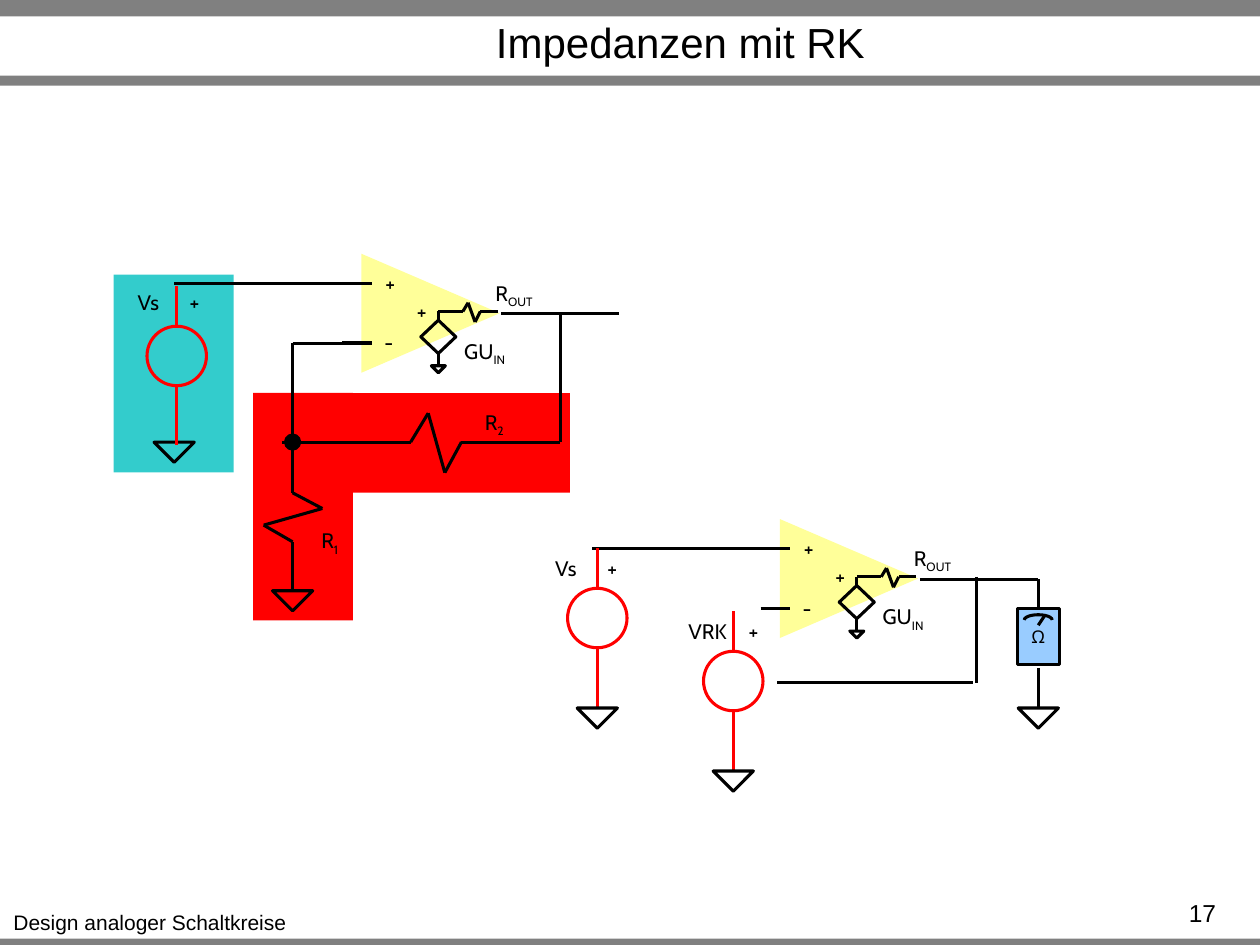
from itertools import pairwise

from lxml.etree import SubElement
from pptx import Presentation
from pptx.dml.color import RGBColor
from pptx.enum.shapes import MSO_CONNECTOR, MSO_SHAPE
from pptx.enum.text import MSO_ANCHOR, MSO_AUTO_SIZE, PP_ALIGN
from pptx.oxml.ns import qn
from pptx.util import Pt

BLACK, RED, GRAY = "000000", "FF0000", "808080"
STROKE = 1.75


def rgb(value):
    """Turn a hex string into a colour."""
    return RGBColor.from_string(value)


def write(frame, content, sub="", size=12, font="Cabin", align=PP_ALIGN.CENTER,
          anchor=MSO_ANCHOR.TOP, wrap=False):
    """Fill a text frame with one line and an optional subscript."""
    frame.word_wrap = wrap
    frame.vertical_anchor = anchor
    line = frame.paragraphs[0]
    line.alignment = align
    for part, baseline in ((content, None), (sub, "-25000")):
        if part:
            run = line.add_run()
            run.text = part
            run.font.size, run.font.name = Pt(size), font
            run.font.color.rgb = rgb(BLACK)
            if baseline:
                run.font._element.set("baseline", baseline)


def label(slide, content, left, top, width, height=21.6, grow=True, **style):
    """Place a text box."""
    box = slide.shapes.add_textbox(Pt(left), Pt(top), Pt(width), Pt(height))
    write(box.text_frame, content, **style)
    if grow:
        box.text_frame.auto_size = MSO_AUTO_SIZE.SHAPE_TO_FIT_TEXT


def block(slide, kind, left, top, width, height, fill=None, line=None, turn=0):
    """Place a preset shape with the given fill and outline."""
    shape = slide.shapes.add_shape(kind, Pt(left), Pt(top), Pt(width), Pt(height))
    shape.shadow.inherit = False
    shape.rotation = turn
    if fill:
        shape.fill.solid()
        shape.fill.fore_color.rgb = rgb(fill)
    else:
        shape.fill.background()
    if line:
        shape.line.color.rgb = rgb(line)
        shape.line.width = Pt(STROKE)
    else:
        shape.line.fill.background()
    return shape


def wire(slide, left, top, *points, color=BLACK):
    """Join points, relative to left and top, and return the last segment."""
    for (x1, y1), (x2, y2) in pairwise(points):
        segment = slide.shapes.add_connector(
            MSO_CONNECTOR.STRAIGHT, Pt(left + x1), Pt(top + y1), Pt(left + x2), Pt(top + y2))
        segment.line.color.rgb = rgb(color)
        segment.line.width = Pt(STROKE)
        SubElement(segment._element.spPr, qn("a:effectLst"))
    return segment


def ground(slide, center, top, width=23, height=11.5):
    """Draw a ground symbol hanging from its top centre."""
    block(slide, MSO_SHAPE.ISOSCELES_TRIANGLE, center - width / 2, top, width, height,
          line=BLACK, turn=180)


def voltage_source(slide, center, top, name, name_left, name_width, plus_left, name_top=0.7):
    """Draw a red source below its upper terminal."""
    block(slide, MSO_SHAPE.OVAL, center - 17, top + 23, 34, 34, line=RED)
    for start, end in ((0, 23), (57, 91)):
        wire(slide, center, top, (0, start), (0, end), color=RED)
    label(slide, name, center + name_left, top + name_top, name_width)
    label(slide, "+", center + plus_left, top + name_top, 23)


def amplifier(slide, left, top, width=79, height=68):
    """Draw an amplifier with its inner source and output resistor."""
    block(slide, MSO_SHAPE.ISOSCELES_TRIANGLE, left + (width - height) / 2,
          top - (width - height) / 2, height, width, fill="FFFF99", turn=90)
    for sign, x, y, sign_width in (("+", 5, 6, 23), ("-", 6, 40, 19), ("+", 23, 22, 23)):
        label(slide, sign, left + x, top + y, sign_width)
    label(slide, "GU", left + 51, top + 45, 39, sub="IN")
    label(slide, "R", left + 68.5, top + 11.5, 37.5, sub="OUT")
    block(slide, MSO_SHAPE.DIAMOND, left + 34, top + 38, 20, 19, line=BLACK)
    wire(slide, left, top, (44, 38), (44, 33), (58, 33), (61, 28), (65, 39), (68, 33), (78, 33))
    wire(slide, left, top, (44, 57), (44, 64))
    ground(slide, left + 44, top + 64, 8, 4)
    for y in (17, 51):
        wire(slide, left, top, (-11, y), (6, y))
    wire(slide, left, top, (80, 34.3), (114, 34.3))


def feedback_network(slide, left, top):
    """Draw the divider R1 and R2 on its red ground."""
    node = (22.5, 28)
    block(slide, MSO_SHAPE.RECTANGLE, left + 51, top, 130, 57, fill=RED)
    block(slide, MSO_SHAPE.RECTANGLE, left, top, 57, 130, fill=RED)
    wire(slide, left, top, (16.5, 28), (90, 28), (100, 11.5), (109.5, 45.5), (119, 28),
         (175.5, 28), (175.5, -45.5))
    wire(slide, left, top, node, (22.5, 57), (39.5, 66), (6, 75.5), (22.5, 85), (22.5, 113))
    wire(slide, left, top, node, (22.5, -28.5), (56, -28.5))
    junction = wire(slide, left, top, (50, 28), node)
    SubElement(junction.line._get_or_add_ln(), qn("a:tailEnd"), type="oval", w="lg", len="lg")
    ground(slide, left + 22.5, top + 113)
    label(slide, "R", left + 30.5, top + 73.5, 26.6, sub="1")
    label(slide, "R", left + 124.5, top + 6, 26.6, sub="2")


def ohmmeter(slide, left, top, width=24, height=32):
    """Draw an ohmmeter and return its case."""
    case = block(slide, MSO_SHAPE.RECTANGLE, left, top, width, height, fill="99CCFF", line=BLACK)
    write(case.text_frame, "Ω", size=10, anchor=MSO_ANCHOR.MIDDLE)
    dial = block(slide, MSO_SHAPE.ARC, left + 4, top + 3.5, width - 8, 6, line=BLACK)
    dial.adjustments[0], dial.adjustments[1] = 108, 0
    wire(slide, left, top, (width / 2, 9.5), (width / 2 + 4, 3.5))
    return case


def loop_circuit(slide, left, top):
    """Draw the amplifier with its feedback loop closed."""
    block(slide, MSO_SHAPE.RECTANGLE, left, top + 12, 68.5, 113, fill="33CCCC")
    amplifier(slide, left + 141.5, top)
    wire(slide, left, top, (34.5, 17), (136, 17))
    wire(slide, left, top, (250, 34.3), (289, 34.3))
    feedback_network(slide, left + 79.7, top + 79.6)
    ground(slide, left + 34.5, top + 107.7)
    voltage_source(slide, left + 36, top + 18.4, "Vs", -30, 27.4, -1.4, name_top=-1.4)


def measurement_circuit(slide, left, top):
    """Draw the opened loop with an ohmmeter at the output."""
    output, lead = 34.3, 283.7
    amplifier(slide, left + 136, top)
    wire(slide, left, top, (28.8, 17), (131, 17))
    case = ohmmeter(slide, left + lead - 12, top + 51.2)
    drop = wire(slide, left, top, (244, output), (lead, output), (lead, 51.2))
    drop.end_connect(case, 0)
    wire(slide, left, top, (lead, 85), (lead, 108))
    ground(slide, left + lead, top + 108)
    wire(slide, left, top, (248.4, 33), (248.4, 93.6))
    wire(slide, left, top, (134.6, 93.6), (246.2, 93.6))
    for name, x, y, *offsets in (("Vs", 31.7, 16.6, -31.7, 27.4, -2.9),
                                 ("VRK", 109.4, 52.6, -33, 36.7, 0)):
        voltage_source(slide, left + x, top + y, name, *offsets)
        ground(slide, left + x, top + y + 91.4)


def page_frame(slide, width):
    """Draw the bars, title, footer and page number."""
    for top, height in ((536.4, 5.8), (0, 9.4), (43.2, 5.8)):
        block(slide, MSO_SHAPE.RECTANGLE, 0, top, width, height, fill=GRAY)
    label(slide, "Impedanzen mit RK", 93.6, 10, 590.4, 27.4, grow=False, size=24,
          font="Arial", anchor=MSO_ANCHOR.MIDDLE, wrap=True)
    label(slide, "Design analoger Schaltkreise", 0, 516.2, 171.4, font="Arial")
    label(slide, "17", 426.2, 509.8, 275.8, 30.2, grow=False, size=14, font="Arial",
          align=PP_ALIGN.RIGHT, wrap=True)


def main():
    """Build and save the slide."""
    deck = Presentation()
    deck.slide_width, deck.slide_height = Pt(720), Pt(540)
    slide = deck.slides.add_slide(deck.slide_layouts[6])
    page_frame(slide, 720)
    loop_circuit(slide, 65, 145)
    measurement_circuit(slide, 309.6, 296.6)
    deck.save("out.pptx")


if __name__ == "__main__":
    main()
